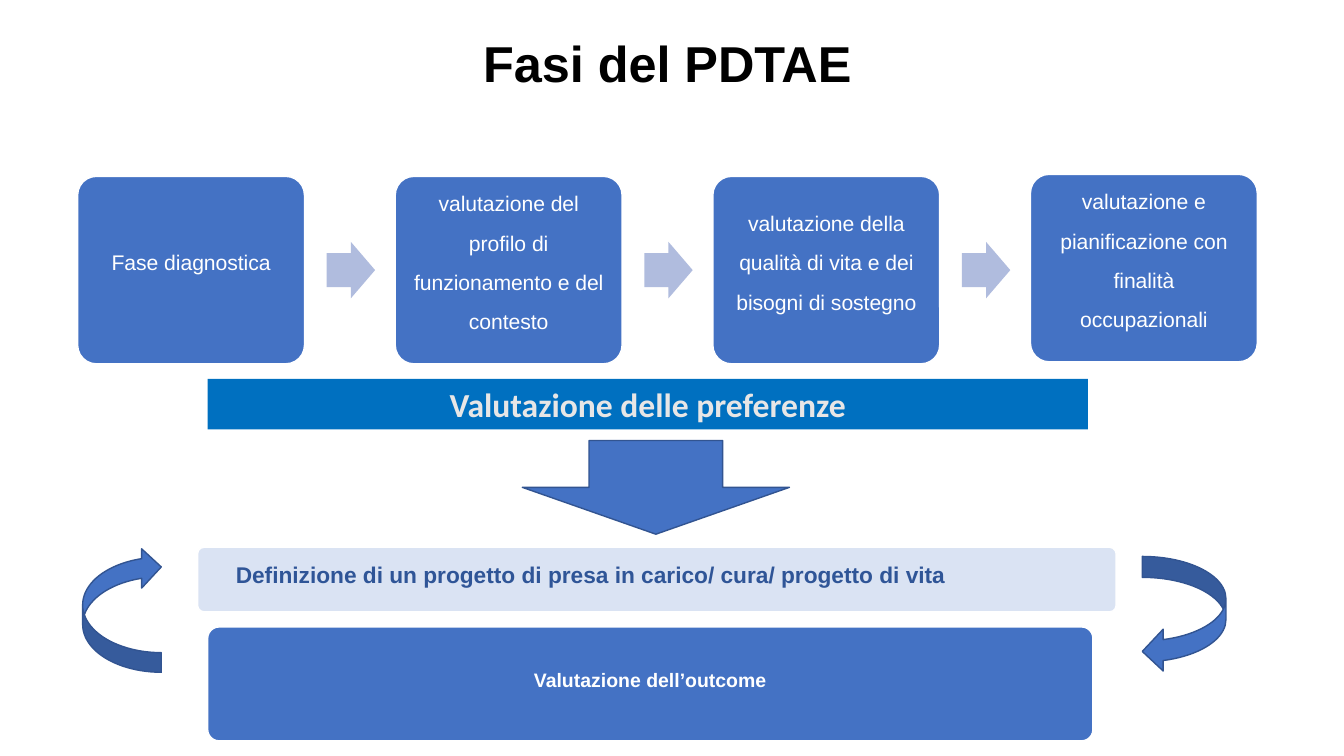
from pptx import Presentation
from pptx.dml.color import RGBColor
from pptx.enum.shapes import MSO_SHAPE
from pptx.enum.text import MSO_ANCHOR, PP_ALIGN
from pptx.util import Inches, Pt

COLOURS = {
    "blue": "4472C4",
    "outline": "325491",
    "arrow": "B0BCDE",
    "pale": "DAE3F3",
    "navy": "2F5597",
    "bar": "0070C0",
    "grey": "E7E6E6",
    "white": "FFFFFF",
    "black": "000000",
}
PHASES = [
    "Fase diagnostica",
    "valutazione del profilo di funzionamento e del contesto",
    "valutazione della qualità di vita e dei bisogni di sostegno",
    "valutazione e pianificazione con finalità occupazionali",
]
PHASE_PITCH = 3.15
LAST_PHASE_RISE = 0.02


def colour(name):
    return RGBColor.from_string(COLOURS[name])


def add_block(slide, kind, box, fill, line=None, adjustments=()):
    shape = slide.shapes.add_shape(kind, *map(Inches, box))
    shape.shadow.inherit = False
    shape.fill.solid()
    shape.fill.fore_color.rgb = colour(fill)
    if line:
        shape.line.color.rgb = colour(line)
        shape.line.width = Pt(1)
    else:
        shape.line.fill.background()
    for index, value in enumerate(adjustments):
        shape.adjustments[index] = value
    return shape


def write(shape, text, size, text_colour, name="Arial", bold=False,
          align=PP_ALIGN.CENTER, inset=None, raised=False, spacing=None):
    frame = shape.text_frame
    frame.word_wrap = True
    frame.vertical_anchor = MSO_ANCHOR.MIDDLE
    if inset:
        for side in ("left", "top", "right", "bottom"):
            setattr(frame, f"margin_{side}", Inches(inset))
    paragraph = frame.paragraphs[0]
    for key, value in (spacing or {}).items():
        setattr(paragraph, key, value)
    paragraph.alignment = align
    run = paragraph.add_run()
    run.text = text
    for key, value in {"name": name, "size": Pt(size), "bold": bold}.items():
        setattr(run.font, key, value)
    run.font.color.rgb = colour(text_colour)
    if raised:
        run._r.get_or_add_rPr().set("baseline", "30000")


def add_title(slide):
    title = slide.shapes.title
    box = {"left": 3.18, "top": 0.26, "width": 6.88, "height": 0.71}
    for key, value in box.items():
        setattr(title, key, Inches(value))
    write(title, "Fasi del PDTAE", 36, "black", bold=True)


def add_phases(slide):
    spacing = {"line_spacing": 0.9, "space_after": Pt(9)}
    last = len(PHASES) - 1
    for index, text in enumerate(PHASES):
        shift = index * PHASE_PITCH
        rise = LAST_PHASE_RISE if index == last else 0
        card = add_block(slide, MSO_SHAPE.ROUNDED_RECTANGLE,
                         (0.77 + shift, 1.75 - rise, 2.25, 1.86),
                         "blue", "white", [0.1])
        write(card, text, 26, "white", inset=0.11, raised=True, spacing=spacing)
        if index < last:
            add_block(slide, MSO_SHAPE.RIGHT_ARROW,
                      (3.24 + shift, 2.4, 0.48, 0.56), "arrow",
                      adjustments=[0.6, 0.5])


def add_curved_arrow(slide, kind, box, flips):
    arrow = add_block(slide, kind, box, "blue", "outline")
    for flip in flips:
        arrow._element.spPr.xfrm.set(flip, "1")


def add_project(slide):
    project = add_block(slide, MSO_SHAPE.ROUNDED_RECTANGLE,
                        (1.96, 5.43, 9.11, 0.64), "pale", "white", [0.1])
    write(project,
          "Definizione di un progetto di presa in carico/ cura/ progetto di vita",
          28, "navy", bold=True, align=PP_ALIGN.LEFT, inset=0.12, raised=True)
    project.text_frame.margin_left = Inches(0.36)
    outcome = add_block(slide, MSO_SHAPE.ROUNDED_RECTANGLE,
                        (2.06, 6.22, 8.78, 1.13), "blue", "white", [0.1])
    write(outcome, "Valutazione dell’outcome", 24, "white", bold=True,
          inset=0.12, raised=True)


def main():
    presentation = Presentation()
    presentation.slide_width = Inches(13.33)
    presentation.slide_height = Inches(7.5)
    slide = presentation.slides.add_slide(presentation.slide_layouts[5])
    add_title(slide)
    add_phases(slide)
    add_block(slide, MSO_SHAPE.DOWN_ARROW, (5.18, 4.37, 2.65, 0.93),
              "blue", "outline")
    add_project(slide)
    add_curved_arrow(slide, MSO_SHAPE.CURVED_LEFT_ARROW,
                     (0.82, 5.43, 0.78, 1.24), ["flipH", "flipV"])
    add_curved_arrow(slide, MSO_SHAPE.CURVED_RIGHT_ARROW,
                     (11.33, 5.52, 0.83, 1.15), ["flipH"])
    preferences = add_block(slide, MSO_SHAPE.RECTANGLE,
                            (2.06, 3.76, 8.73, 0.5), "bar")
    write(preferences, "Valutazione delle preferenze", 24, "grey",
          name="Calibri", bold=True)
    presentation.save("out.pptx")


if __name__ == "__main__":
    main()
